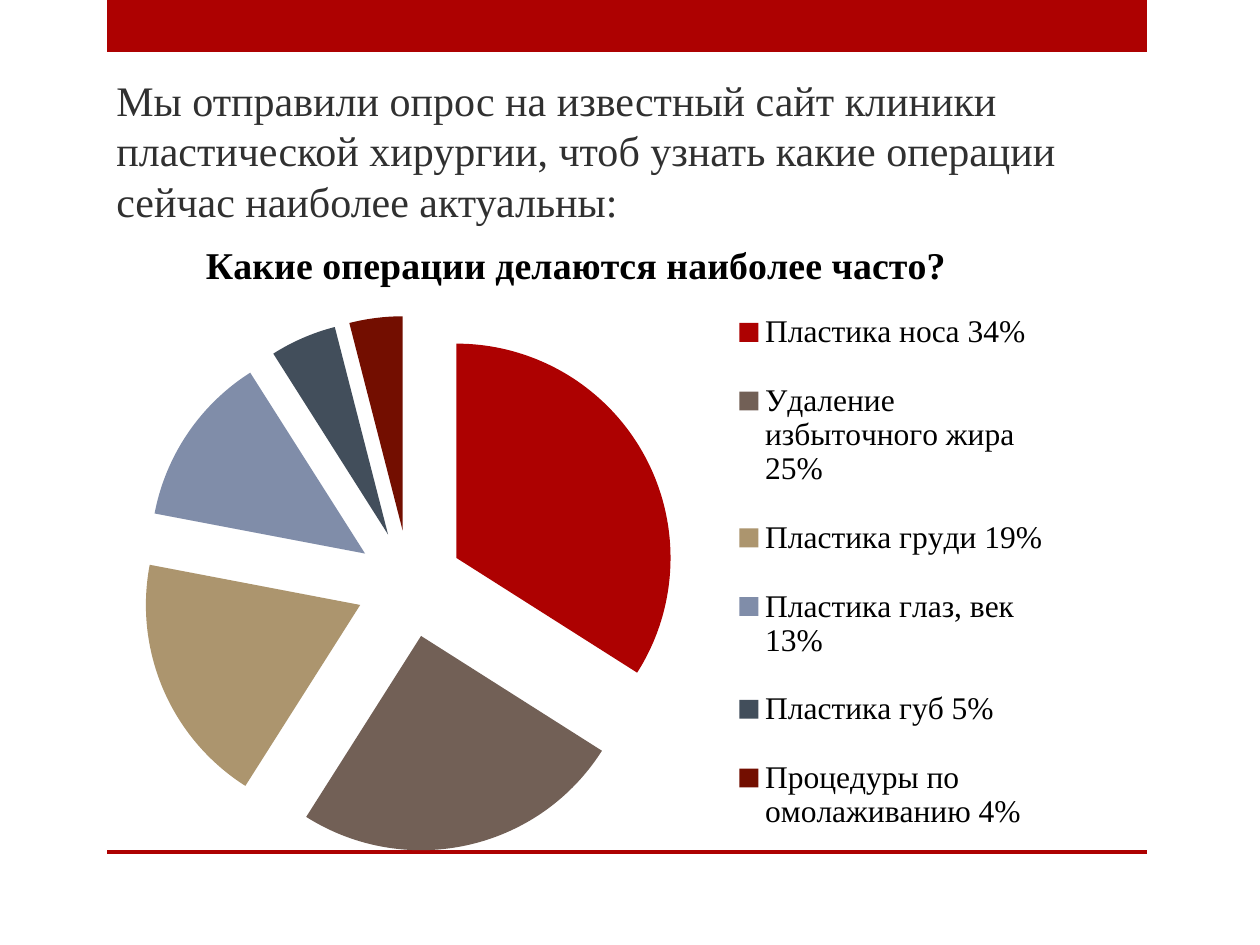
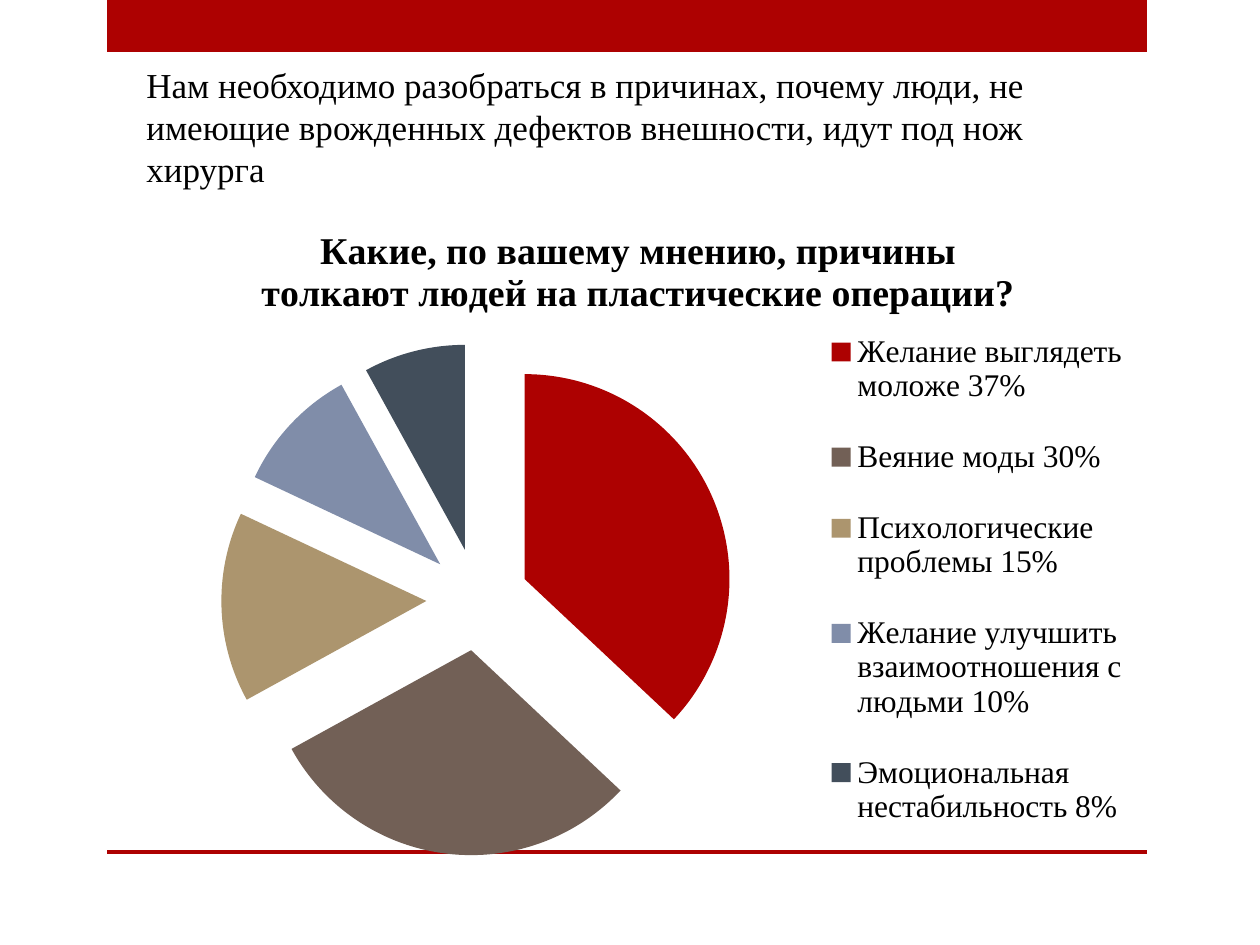
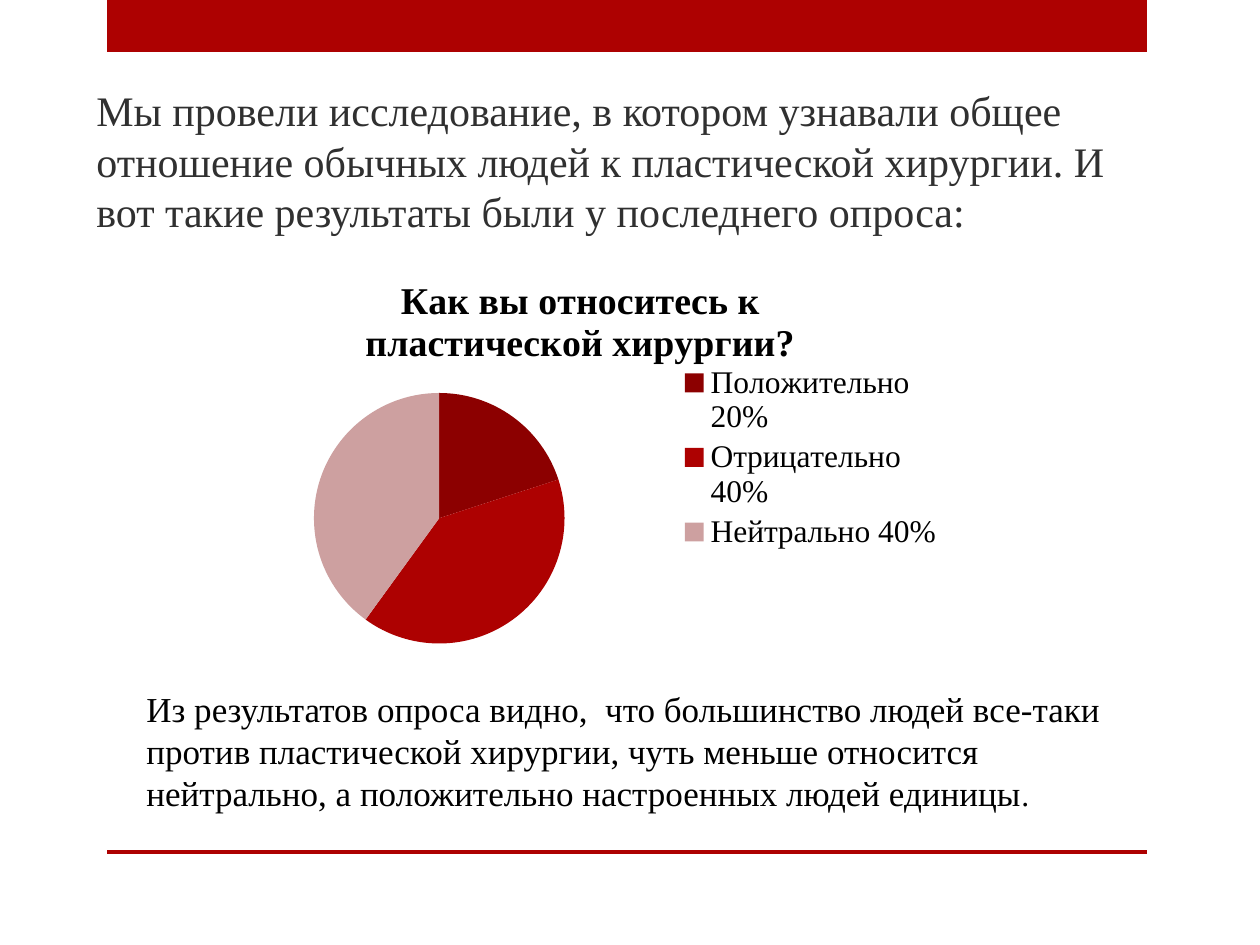
from lxml.etree import SubElement
from pptx import Presentation
from pptx.chart.data import CategoryChartData
from pptx.dml.color import RGBColor
from pptx.enum.chart import XL_CHART_TYPE, XL_LEGEND_POSITION
from pptx.enum.shapes import MSO_SHAPE
from pptx.enum.text import MSO_ANCHOR
from pptx.oxml.ns import qn
from pptx.util import Inches, Pt

PX = 914400 // 126
FONT = "Times New Roman"
RED, DARK, BLACK = "AD0101", "303030", "000000"
PALETTE = [RED, "726056", "AC956E", "808DA9", "424E5B", "730E00"]
REDS = ["8C0000", RED, "CDA0A0"]
BANDS = [(107, 0, 1040, 52), (107, 850, 1040, 4)]
LEAD = dict(size=24, color=DARK, anchor=MSO_ANCHOR.MIDDLE, before=5)

SLIDES = [
    dict(
        texts=[("Мы отправили опрос на известный сайт клиники пластической хирургии, "
                "чтоб узнать какие операции сейчас наиболее актуальны:",
                (104, 26, 1040, 248), LEAD)],
        title="Какие операции делаются наиболее часто?",
        box=(94, 214, 965, 655), legend=(736, 281, 315, 583),
        colors=PALETTE, explosion=25,
        data={"Пластика носа 34%": 34, "Удаление избыточного жира 25%": 25,
              "Пластика груди 19%": 19, "Пластика глаз, век 13%": 13,
              "Пластика губ 5%": 5, "Процедуры по омолаживанию 4%": 4},
    ),
    dict(
        texts=[("Нам необходимо разобраться в причинах, почему люди, не имеющие "
                "врожденных дефектов внешности, идут под нож хирурга",
                (134, 57, 963, 140), {})],
        title="Какие, по вашему мнению, причины толкают людей на пластические операции?",
        box=(134, 199, 1009, 674), legend=(822, 298, 310, 563),
        colors=PALETTE, explosion=25,
        data={"Желание выглядеть моложе 37%": 37, "Веяние моды 30%": 30,
              "Психологические проблемы 15%": 15,
              "Желание улучшить взаимоотношения с людьми 10%": 10,
              "Эмоциональная нестабильность 8%": 8},
    ),
    dict(
        texts=[("Мы провели исследование, в котором узнавали общее отношение обычных "
                "людей к пластической хирургии. И вот такие результаты были у "
                "последнего опроса:", (84, 17, 1052, 287), LEAD),
               ("Из результатов опроса видно,  что большинство людей все-таки против "
                "пластической хирургии, чуть меньше относится нейтрально, а "
                "положительно настроенных людей единицы", (134, 681, 1012, 140),
                dict(ending="."))],
        title="Как вы относитесь к пластической хирургии?",
        box=(204, 254, 753, 407), legend=None,
        colors=REDS, explosion=0,
        data={"Положительно 20%": 20, "Отрицательно 40%": 40, "Нейтрально 40%": 40},
    ),
]


def rgb(color):
    return RGBColor.from_string(color)


def add_text(s, text, box, size=20, color=BLACK, anchor=MSO_ANCHOR.TOP, before=0, ending=""):
    """Add a wrapped text box; the ending, if any, is set at 18 pt."""
    tf = s.shapes.add_textbox(*[v * PX for v in box]).text_frame
    tf.word_wrap = True
    tf.vertical_anchor = anchor
    p = tf.paragraphs[0]
    p.space_before = Pt(before)
    for part, points in ((text, size), (ending, 18)):
        if part:
            r = p.add_run()
            r.text = part
            r.font.name, r.font.size = FONT, Pt(points)
            r.font.color.rgb = rgb(color)


prs = Presentation()
prs.slide_width, prs.slide_height = Inches(10), Inches(7.5)

for page in SLIDES:
    s = prs.slides.add_slide(prs.slide_layouts[6])
    for band in BANDS:
        sp = s.shapes.add_shape(MSO_SHAPE.RECTANGLE, *[v * PX for v in band])
        sp.shadow.inherit = False
        sp.fill.solid()
        sp.fill.fore_color.rgb = rgb(RED)
        sp.line.fill.background()

    for text, box, style in page["texts"]:
        add_text(s, text, box, **style)

    data = CategoryChartData()
    data.categories = page["data"].keys()
    data.add_series(page["title"], page["data"].values())
    left, top, width, height = page["box"]
    chart = s.shapes.add_chart(
        XL_CHART_TYPE.PIE, *[v * PX for v in page["box"]], data).chart
    chart.font.name, chart.font.size = FONT, Pt(18)
    chart.font.color.rgb = rgb(BLACK)
    # The title shows the series name, bold and 1.2 times the chart's text size
    chart.has_title = True

    plot = chart.plots[0]
    plot.vary_by_categories = True
    series = plot.series[0]
    for i, color in enumerate(page["colors"][:len(page["data"])]):
        fill = series.points[i].format.fill
        fill.solid()
        fill.fore_color.rgb = rgb(color)
    if page["explosion"]:
        ser = series._element
        explosion = SubElement(ser, qn("c:explosion"), val=str(page["explosion"]))
        ser.find(qn("c:tx")).addnext(explosion)

    chart.has_legend = True
    legend = chart.legend
    legend.position = XL_LEGEND_POSITION.RIGHT
    legend.include_in_layout = False
    if page["legend"]:
        x, y, w, h = page["legend"]
        el = legend._element
        layout = el.find(qn("c:layout"))
        if layout is None:
            layout = SubElement(el, qn("c:layout"))
            el.find(qn("c:legendPos")).addnext(layout)
        manual = SubElement(layout, qn("c:manualLayout"))
        for name in "xy":
            SubElement(manual, qn(f"c:{name}Mode"), val="edge")
        shares = dict(x=(x - left) / width, y=(y - top) / height, w=w / width, h=h / height)
        for name, share in shares.items():
            SubElement(manual, qn(f"c:{name}"), val=f"{share:.3f}")

prs.save("out.pptx")
